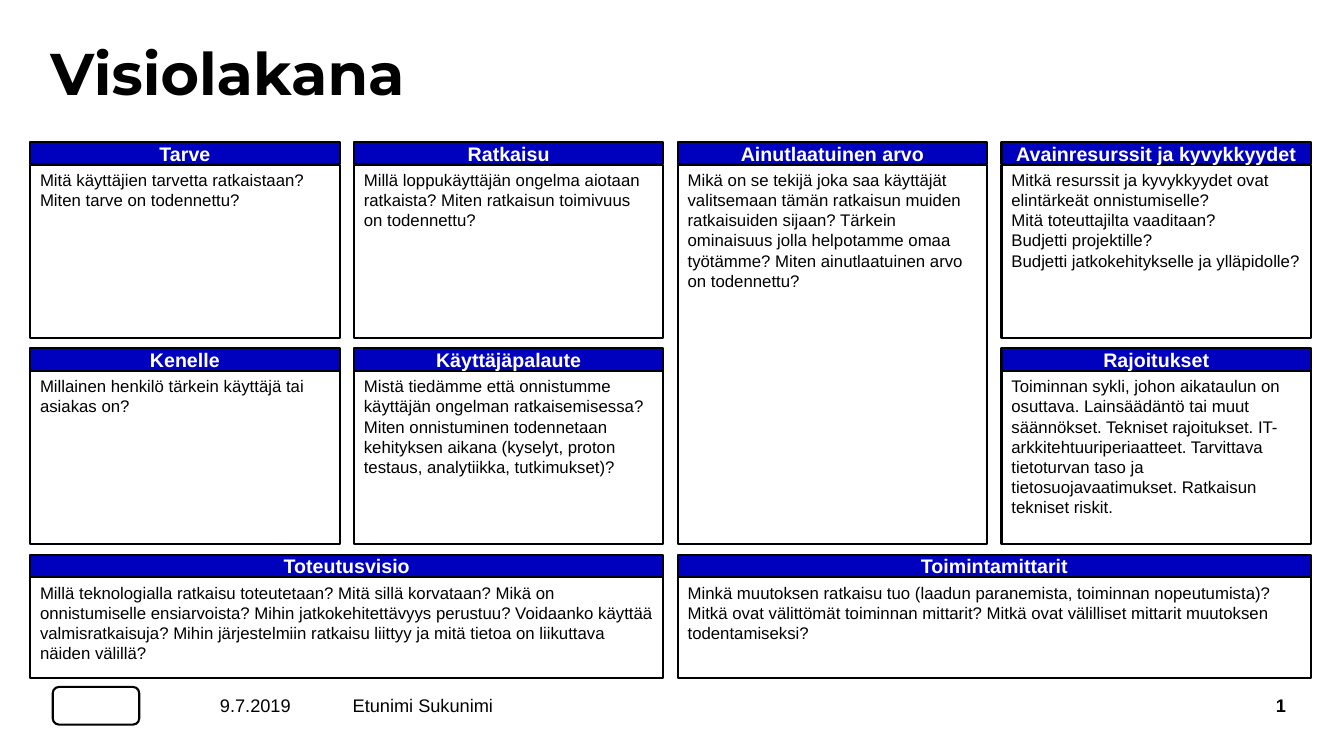
from pptx import Presentation
from pptx.dml.color import RGBColor
from pptx.enum.shapes import MSO_SHAPE as Shape
from pptx.enum.text import MSO_ANCHOR as Anchor, PP_ALIGN as Align
from pptx.util import Cm, Pt

BLACK = RGBColor(0, 0, 0)
WHITE = RGBColor(255, 255, 255)
BLUE = RGBColor(0, 0, 0xBF)

# Grid in centimetres
LEFT, TOP = 0.76, 3.58
STEP_X, STEP_Y = 8.16, 5.2
CARD_W, HEAD_H, HEAD_STEP = 7.8, 0.56, 0.57
BODY_H, LOW_H = 4.37, 2.54

# Column, row, columns spanned, rows spanned, heading, paragraphs
CARDS = [
    (0, 0, 1, 1, "Tarve",
     ["Mitä käyttäjien tarvetta ratkaistaan? Miten tarve on todennettu?"]),
    (1, 0, 1, 1, "Ratkaisu",
     ["Millä loppukäyttäjän ongelma aiotaan ratkaista? Miten ratkaisun "
      "toimivuus on todennettu?"]),
    (2, 0, 1, 2, "Ainutlaatuinen arvo",
     ["Mikä on se tekijä joka saa käyttäjät valitsemaan tämän ratkaisun "
      "muiden ratkaisuiden sijaan? Tärkein ominaisuus jolla helpotamme omaa "
      "työtämme? Miten ainutlaatuinen arvo on todennettu?"]),
    (3, 0, 1, 1, "Avainresurssit ja kyvykkyydet",
     ["Mitkä resurssit ja kyvykkyydet ovat elintärkeät onnistumiselle?",
      "Mitä toteuttajilta vaaditaan?",
      "Budjetti projektille?",
      "Budjetti jatkokehitykselle ja ylläpidolle?"]),
    (0, 1, 1, 1, "Kenelle",
     ["Millainen henkilö tärkein käyttäjä tai asiakas on?"]),
    (1, 1, 1, 1, "Käyttäjäpalaute",
     ["Mistä tiedämme että onnistumme käyttäjän ongelman ratkaisemisessa? "
      "Miten onnistuminen todennetaan kehityksen aikana (kyselyt, proton "
      "testaus, analytiikka, tutkimukset)?"]),
    (3, 1, 1, 1, "Rajoitukset",
     ["Toiminnan sykli, johon aikataulun on osuttava. Lainsäädäntö tai muut "
      "säännökset. Tekniset rajoitukset. IT-arkkitehtuuriperiaatteet. "
      "Tarvittava tietoturvan taso ja tietosuojavaatimukset. Ratkaisun "
      "tekniset riskit."]),
    (0, 2, 2, 1, "Toteutusvisio",
     ["Millä teknologialla ratkaisu toteutetaan? Mitä sillä korvataan? Mikä "
      "on onnistumiselle ensiarvoista? Mihin jatkokehitettävyys perustuu? "
      "Voidaanko käyttää valmisratkaisuja? Mihin järjestelmiin ratkaisu "
      "liittyy ja mitä tietoa on liikuttava näiden välillä?"]),
    (2, 2, 2, 1, "Toimintamittarit",
     ["Minkä muutoksen ratkaisu tuo (laadun paranemista, toiminnan "
      "nopeutumista)? Mitkä ovat välittömät toiminnan mittarit? Mitkä ovat "
      "välilliset mittarit muutoksen todentamiseksi?"]),
]


def set_text(frame, lines, size, color=BLACK, bold=False, align=Align.LEFT,
             anchor=Anchor.TOP, face="Arial"):
    frame.word_wrap = True
    frame.vertical_anchor = anchor
    frame.text = "\n".join(lines)
    for para in frame.paragraphs:
        para.alignment = align
        for run in para.runs:
            font = run.font
            font.name, font.size, font.bold = face, Pt(size), bold
            font.color.rgb = color


def add_box(slide, x, y, w, h, fill, kind=Shape.RECTANGLE):
    box = slide.shapes.add_shape(kind, Cm(x), Cm(y), Cm(w), Cm(h))
    box.shadow.inherit = False
    box.fill.solid()
    box.fill.fore_color.rgb = fill
    box.line.color.rgb = BLACK
    box.line.width = Pt(1.5)
    return box


def add_label(slide, x, y, w, h, text, size, **style):
    frame = slide.shapes.add_textbox(Cm(x), Cm(y), Cm(w), Cm(h)).text_frame
    frame.margin_left = frame.margin_right = 0
    frame.margin_top = frame.margin_bottom = 0
    set_text(frame, [text], size, **style)
    return frame


def add_card(slide, col, row, cols, rows, head, lines):
    x, y = LEFT + col * STEP_X, TOP + row * STEP_Y
    width = CARD_W + (cols - 1) * STEP_X
    height = LOW_H if row == 2 else BODY_H + (rows - 1) * STEP_Y
    body = add_box(slide, x, y + HEAD_STEP, width, height, WHITE)
    set_text(body.text_frame, lines, 12)
    bar = add_box(slide, x, y, width, HEAD_H, BLUE)
    set_text(bar.text_frame, [head], 14, color=WHITE, bold=True,
             align=Align.CENTER, anchor=Anchor.MIDDLE)


def main():
    deck = Presentation()
    deck.slide_width, deck.slide_height = Cm(33.87), Cm(19.05)
    slide = deck.slides.add_slide(deck.slide_layouts[6])

    # Title
    title = add_label(slide, 1.27, 1.14, 31.22, 2.18, "Visiolakana", 42,
                      bold=True, face="Montserrat")
    title.paragraphs[0].line_spacing = 0.9

    # Canvas cards
    for card in CARDS:
        add_card(slide, *card)

    # Footer: plain badge, date, author and page number
    add_box(slide, 1.33, 17.31, 2.18, 0.95, WHITE, Shape.ROUNDED_RECTANGLE)
    for x, width, text, align, bold in [
        (4.62, 3.63, "9.7.2019", Align.CENTER, False),
        (8.89, 11.43, "Etunimi Sukunimi", Align.LEFT, False),
        (28.98, 3.43, "1", Align.RIGHT, True),
    ]:
        add_label(slide, x, 17.42, width, 0.71, text, 13, bold=bold,
                  align=align, anchor=Anchor.MIDDLE)

    deck.save("out.pptx")


if __name__ == "__main__":
    main()
